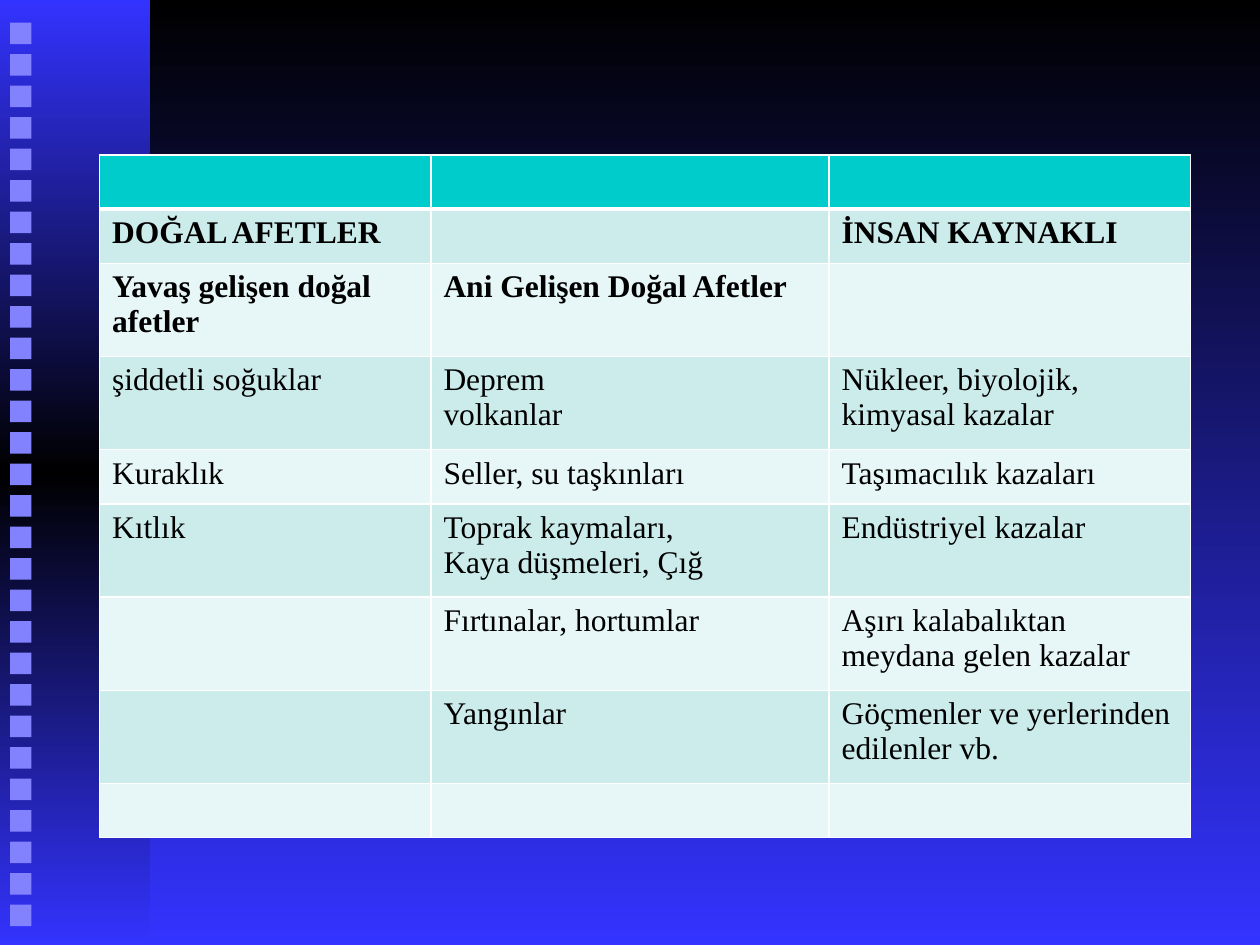
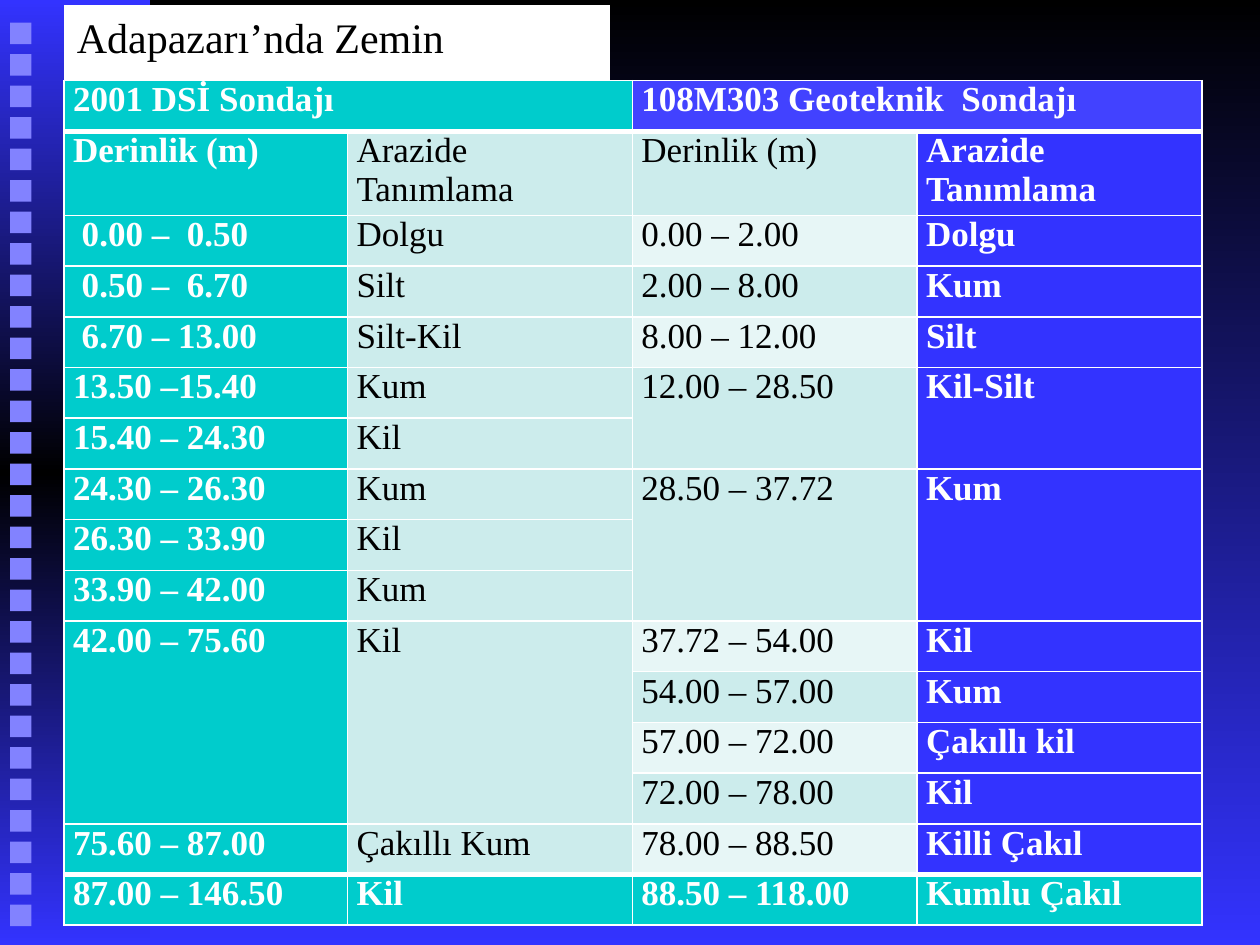
"""Builds two slides on disasters and the ground layers at Adapazarı."""
import copy
from dataclasses import dataclass
from typing import Callable

import pptx
import pptx.dml.color
import pptx.dml.fill
import pptx.enum.shapes
import pptx.enum.text
import pptx.oxml
import pptx.oxml.ns
import pptx.presentation
import pptx.slide
import pptx.table
import pptx.util
from pptx.util import Inches

FONT = "Times New Roman"
COLORS = {
    "black": "000000",
    "white": "FFFFFF",
    "blue": "3333FF",
    "header_blue": "4242FF",
    "square": "8282FF",
    "teal": "00CCCC",
    "pale": "CCECEC",
    "light": "E7F6F6",
}

DISASTER_ROWS = [
    ("", "", ""),
    ("DOĞAL AFETLER", "", "İNSAN KAYNAKLI"),
    ("Yavaş gelişen doğal afetler", "Ani Gelişen Doğal Afetler", ""),
    ("şiddetli soğuklar", "Deprem\nvolkanlar", "Nükleer, biyolojik, kimyasal kazalar"),
    ("Kuraklık", "Seller, su taşkınları", "Taşımacılık kazaları"),
    ("Kıtlık", "Toprak kaymaları,\nKaya düşmeleri, Çığ", "Endüstriyel kazalar"),
    ("", "Fırtınalar, hortumlar", "Aşırı kalabalıktan meydana gelen kazalar"),
    ("", "Yangınlar", "Göçmenler ve yerlerinden edilenler vb."),
    ("", "", ""),
]

BORING_ROWS = [
    ("2001 DSİ Sondajı", "", "108M303 Geoteknik  Sondajı", ""),
    ("Derinlik (m)", "Arazide Tanımlama", "Derinlik (m)", "Arazide Tanımlama"),
    (" 0.00 –  0.50", "Dolgu", "0.00 – 2.00", "Dolgu"),
    (" 0.50 –  6.70", "Silt", "2.00 – 8.00", "Kum"),
    (" 6.70 – 13.00", "Silt-Kil", "8.00 – 12.00", "Silt"),
    ("13.50 –15.40", "Kum", "12.00 – 28.50", "Kil-Silt"),
    ("15.40 – 24.30", "Kil", "", ""),
    ("24.30 – 26.30", "Kum", "28.50 – 37.72", "Kum"),
    ("26.30 – 33.90", "Kil", "", ""),
    ("33.90 – 42.00", "Kum", "", ""),
    ("42.00 – 75.60", "Kil", "37.72 – 54.00", "Kil"),
    ("", "", "54.00 – 57.00", "Kum"),
    ("", "", "57.00 – 72.00", "Çakıllı kil"),
    ("", "", "72.00 – 78.00", "Kil"),
    ("75.60 – 87.00", "Çakıllı Kum", "78.00 – 88.50", "Killi Çakıl"),
    ("87.00 – 146.50", "Kil", "88.50 – 118.00", "Kumlu Çakıl"),
]


@dataclass(frozen=True)
class CellLook:
    fill: str
    color: str
    bold: bool


@dataclass(frozen=True)
class Merge:
    row: int
    col: int
    down: int
    across: int


@dataclass(frozen=True)
class TableSpec:
    left: float
    top: float
    widths: list[float]
    heights: list[float]
    rows: list[tuple[str, ...]]
    look: Callable[[int, int], CellLook]
    size: int
    align: pptx.enum.text.PP_ALIGN
    margins: tuple[float, float]
    merges: tuple[Merge, ...]
    thick_edges: tuple[int, ...]


def rgb(name: str) -> pptx.dml.color.RGBColor:
    return pptx.dml.color.RGBColor.from_string(COLORS[name])


def band_fill(row: int) -> str:
    return "pale" if row % 2 else "light"


def disaster_look(row: int, col: int) -> CellLook:
    return CellLook(band_fill(row) if row else "teal", "black", row in (1, 2))


def boring_look(row: int, col: int) -> CellLook:
    if row == 0:
        return CellLook("teal" if col < 2 else "header_blue", "white", True)
    if row == len(BORING_ROWS) - 1:
        return CellLook("teal", "white", True)
    fill = ("teal", "pale", band_fill(row), "blue")[col]
    inner = col in (1, 2)
    return CellLook(fill, "black" if inner else "white", not inner)


def paint_gradient(fill: pptx.dml.fill.FillFormat, element, names: list[str]) -> None:
    fill.gradient()
    fill.gradient_angle = 270
    stop_list = next(element.iter(pptx.oxml.ns.qn("a:gsLst")))
    for _ in names[2:]:
        stop_list.append(copy.deepcopy(stop_list[-1]))
    for i, (stop, name) in enumerate(zip(fill.gradient_stops, names)):
        stop.color.rgb = rgb(name)
        stop.position = i / (len(names) - 1)


def add_rect(shapes, left: float, top: float, width: float, height: float):
    sp = shapes.add_shape(
        pptx.enum.shapes.MSO_SHAPE.RECTANGLE,
        Inches(left), Inches(top), Inches(width), Inches(height),
    )
    sp.shadow.inherit = False
    sp.line.fill.background()
    return sp


def decorate_master(prs: pptx.presentation.Presentation, slide: pptx.slide.Slide) -> None:
    master = prs.slide_master
    paint_gradient(master.background.fill, master.element, ["black", "blue"])
    band = add_rect(slide.shapes, 0, 0, 1.19, 7.5)
    paint_gradient(band.fill, band.element, ["blue", "black", "blue"])
    squares = slide.shapes.add_group_shape()
    for i in range(29):
        sp = add_rect(squares.shapes, 0.08, 0.18 + 0.25 * i, 0.17, 0.17)
        sp.fill.solid()
        sp.fill.fore_color.rgb = rgb("square")
    next_id = 100
    for position, item in enumerate((band, squares), 2):
        for props in item.element.iter(pptx.oxml.ns.qn("p:cNvPr")):
            props.set("id", str(next_id))
            next_id += 1
        master.shapes.element.insert(position, item.element)


def format_run(r, size: int, color: str, bold: bool) -> None:
    r.font.name = FONT
    r.font.size = pptx.util.Pt(size)
    r.font.bold = bold
    r.font.color.rgb = rgb(color)


def set_borders(cell, top: int, bottom: int) -> None:
    props = cell.fill and cell._tc.get_or_add_tcPr()
    for side, points in (("L", 1), ("R", 1), ("T", top), ("B", bottom)):
        props.append(pptx.oxml.parse_xml(
            f'<a:ln{side} {pptx.oxml.ns.nsdecls("a")} w="{pptx.util.Pt(points)}">'
            f'<a:solidFill><a:srgbClr val="{COLORS["white"]}"/></a:solidFill></a:ln{side}>'
        ))


def fill_cell(cell, text: str, look: CellLook, spec: TableSpec) -> None:
    cell.fill.solid()
    cell.fill.fore_color.rgb = rgb(look.fill)
    cell.margin_left = cell.margin_right = Inches(spec.margins[0])
    cell.margin_top = cell.margin_bottom = Inches(spec.margins[1])
    tf = cell.text_frame
    for i, line in enumerate(text.split("\n") if text else []):
        p = tf.add_paragraph() if i else tf.paragraphs[0]
        p.alignment = spec.align
        r = p.add_run()
        r.text = line
        format_run(r, spec.size, look.color, look.bold)


def add_table(slide: pptx.slide.Slide, spec: TableSpec) -> None:
    table = slide.shapes.add_table(
        len(spec.rows), len(spec.widths), Inches(spec.left), Inches(spec.top),
        Inches(sum(spec.widths)), Inches(sum(spec.heights)),
    ).table
    table.first_row = table.horz_banding = False
    for column, width in zip(table.columns, spec.widths):
        column.width = Inches(width)
    for row, height in zip(table.rows, spec.heights):
        row.height = Inches(height)
    for m in spec.merges:
        end = table.cell(m.row + m.down - 1, m.col + m.across - 1)
        table.cell(m.row, m.col).merge(end)
    for i, texts in enumerate(spec.rows):
        top, bottom = (3 if edge in spec.thick_edges else 1 for edge in (i, i + 1))
        for j, text in enumerate(texts):
            cell = table.cell(i, j)
            set_borders(cell, top, bottom)
            fill_cell(cell, text, spec.look(i, j), spec)


def add_title(slide: pptx.slide.Slide, text: str) -> None:
    sp = slide.shapes.title
    sp.left, sp.top, sp.width, sp.height = map(Inches, (0.51, 0.04, 4.33, 0.5))
    sp.fill.solid()
    sp.fill.fore_color.rgb = rgb("white")
    tf = sp.text_frame
    tf.word_wrap = True
    tf.auto_size = pptx.enum.text.MSO_AUTO_SIZE.SHAPE_TO_FIT_TEXT
    tf.vertical_anchor = pptx.enum.text.MSO_ANCHOR.TOP
    p = tf.paragraphs[0]
    p.alignment = pptx.enum.text.PP_ALIGN.LEFT
    r = p.add_run()
    r.text = text
    format_run(r, 24, "black", False)


def main() -> None:
    prs = pptx.Presentation()
    prs.slide_width, prs.slide_height = Inches(10), Inches(7.5)
    title_only, blank = prs.slide_layouts[5], prs.slide_layouts[6]

    disasters = prs.slides.add_slide(blank)
    decorate_master(prs, disasters)
    short, tall = 0.43, 0.74
    add_table(disasters, TableSpec(
        0.79, 1.23, [2.63, 3.16, 2.87],
        [short, short, tall, tall, short, tall, tall, tall, short],
        DISASTER_ROWS, disaster_look, 18, pptx.enum.text.PP_ALIGN.LEFT,
        (0.1, 0.05), (), (1,),
    ))

    borings = prs.slides.add_slide(title_only)
    add_title(borings, "Adapazarı’nda Zemin")
    line_height = (6.68 - 0.64) / 15
    add_table(borings, TableSpec(
        0.51, 0.64, [2.25, 2.26, 2.26, 2.26],
        [line_height, 0.64] + [line_height] * 14,
        BORING_ROWS, boring_look, 20, pptx.enum.text.PP_ALIGN.JUSTIFY, (0.07, 0),
        (
            Merge(0, 0, 1, 2), Merge(0, 2, 1, 2),
            Merge(5, 2, 2, 1), Merge(5, 3, 2, 1),
            Merge(7, 2, 3, 1), Merge(7, 3, 3, 1),
            Merge(10, 0, 4, 1), Merge(10, 1, 4, 1),
        ),
        (1, 15),
    ))
    prs.save("out.pptx")


if __name__ == "__main__":
    main()
